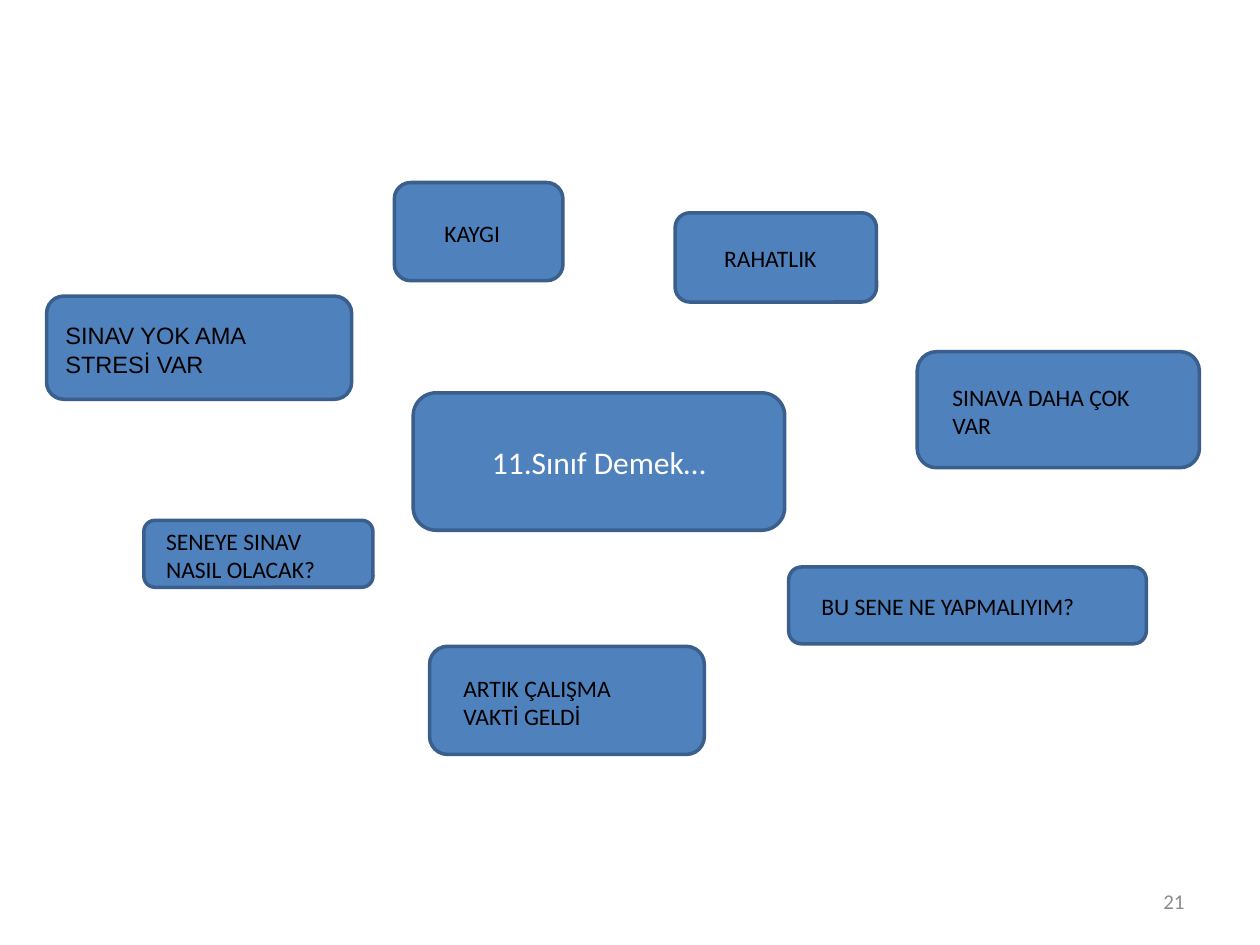
from pptx import Presentation
from pptx.dml.color import RGBColor
from pptx.enum.shapes import MSO_SHAPE
from pptx.enum.text import MSO_ANCHOR, PP_ALIGN
from pptx.util import Cm, Pt

ROUNDED = MSO_SHAPE.ROUNDED_RECTANGLE
MIDDLE = MSO_ANCHOR.MIDDLE
LEFT, CENTER, RIGHT = PP_ALIGN.LEFT, PP_ALIGN.CENTER, PP_ALIGN.RIGHT
FILL, OUTLINE = "4F81BD", "3A5F8C"
BLACK, WHITE, GREY = "000000", "FFFFFF", "8C8C8C"

# Content: positions in cm (left, top, width, height)
CENTRE = ("11.Sınıf Demek…", (8.33, 7.92, 7.49, 2.77))
PAGE_NUMBER = ("21", (18.21, 17.65, 5.92, 1.02))
# text, font, box position, label position
THOUGHTS = [
    ("SENEYE SINAV NASIL OLACAK?", "Calibri",
     (2.9, 10.49, 4.62, 1.35), (3.1, 10.49, 4.19, 1.42)),
    ("ARTIK ÇALIŞMA VAKTİ GELDİ", "Calibri",
     (8.66, 13.03, 5.54, 2.18), (9.09, 13.46, 4.65, 1.42)),
    ("BU SENE NE YAPMALIYIM?", "Calibri",
     (15.9, 11.43, 7.21, 1.55), (16.31, 11.81, 6.76, 0.84)),
    ("SINAVA DAHA ÇOK VAR", "Calibri",
     (18.49, 7.09, 5.69, 2.34), (18.95, 7.59, 4.8, 1.42)),
    ("RAHATLIK", "Calibri",
     (13.61, 4.29, 4.06, 1.8), (14.35, 4.8, 5.41, 0.84)),
    ("KAYGI", "Calibri",
     (7.95, 3.68, 3.4, 1.98), (8.71, 4.29, 3.76, 0.84)),
    ("SINAV YOK AMA STRESİ VAR", "Arial",
     (0.94, 5.97, 6.15, 2.08), (1.07, 6.35, 5.89, 1.42)),
]


def color(hex_value):
    return RGBColor.from_string(hex_value)


def lengths(position):
    return [Cm(value) for value in position]


def write(shape, text, size, font_name, font_color, align=LEFT):
    shape.text_frame.word_wrap = True
    paragraph = shape.text_frame.paragraphs[0]
    paragraph.text = text
    paragraph.alignment = align
    paragraph.font.size = Pt(size)
    paragraph.font.name = font_name
    paragraph.font.color.rgb = color(font_color)


def add_box(slide, position):
    shape = slide.shapes.add_shape(ROUNDED, *lengths(position))
    shape.shadow.inherit = False
    shape.fill.solid()
    shape.fill.fore_color.rgb = color(FILL)
    shape.line.color.rgb = color(OUTLINE)
    shape.line.width = Pt(2)
    return shape


def main():
    presentation = Presentation()
    presentation.slide_width, presentation.slide_height = Cm(25.4), Cm(19.05)
    slide = presentation.slides.add_slide(presentation.slide_layouts[6])

    # Thoughts around the centre
    for text, font_name, box_position, label_position in THOUGHTS:
        add_box(slide, box_position)
        label = slide.shapes.add_textbox(*lengths(label_position))
        write(label, text, 13.5, font_name, BLACK)

    # Central topic
    text, position = CENTRE
    centre = add_box(slide, position)
    centre.text_frame.vertical_anchor = MIDDLE
    write(centre, text, 18, "Calibri", WHITE, CENTER)

    # Page number
    text, position = PAGE_NUMBER
    number = slide.shapes.add_textbox(*lengths(position))
    number.text_frame.vertical_anchor = MIDDLE
    write(number, text, 12, "Calibri", GREY, RIGHT)

    presentation.save("out.pptx")


if __name__ == "__main__":
    main()
